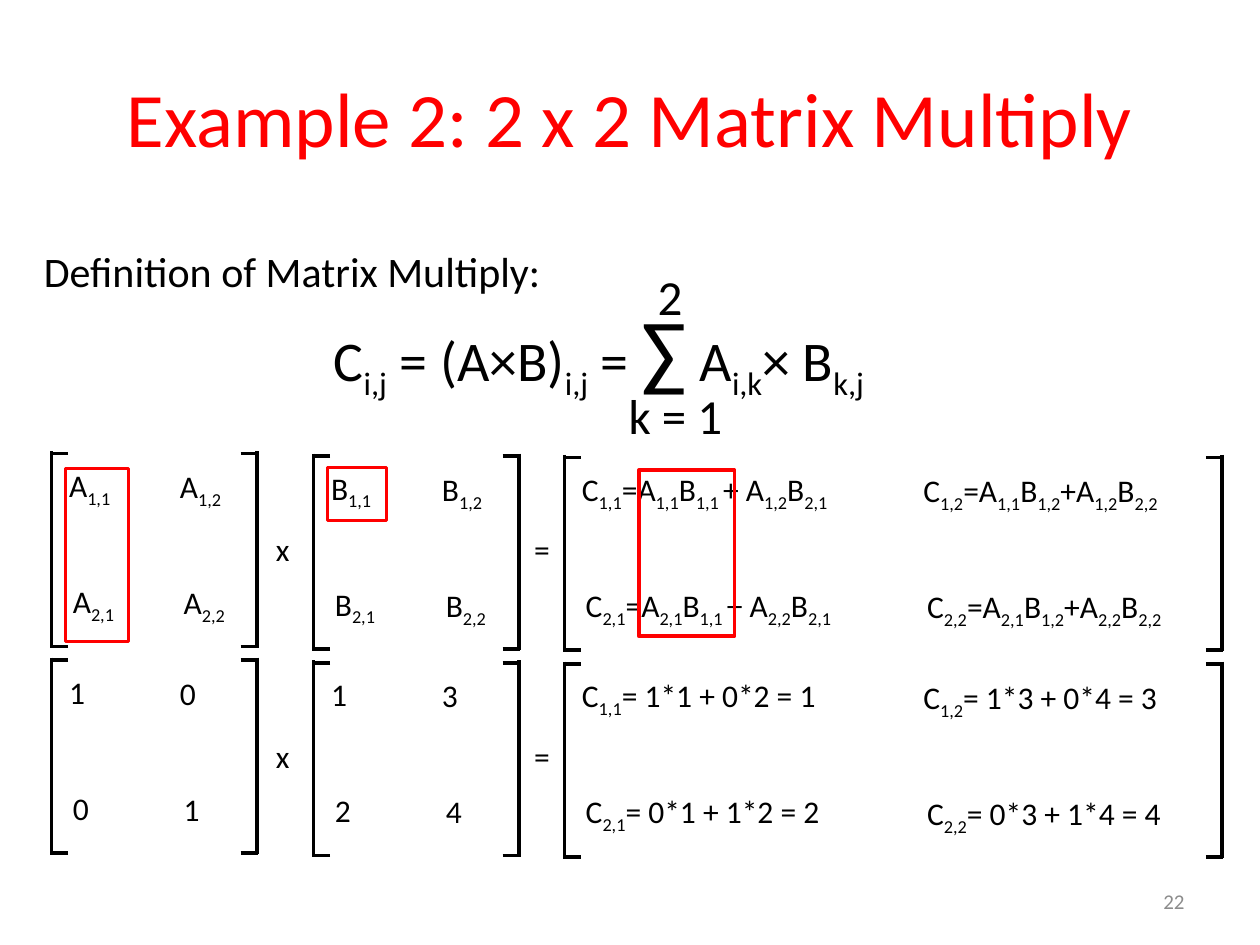
from lxml.etree import SubElement
from pptx import Presentation
from pptx.dml.color import RGBColor
from pptx.enum.shapes import MSO_CONNECTOR, MSO_SHAPE
from pptx.enum.text import MSO_ANCHOR, MSO_AUTO_SIZE, PP_ALIGN
from pptx.oxml.ns import qn
from pptx.util import Inches, Pt

COLORS = {"red": "FF0000", "black": "000000", "gray": "8C8C8C"}
SIGMA = "∑"

# Bracket left and right, top, and step between the two columns of entries
FRAMES = [
    (0.41, 2.04, 3.58, 0.88),
    (2.49, 4.12, 3.60, 0.88),
    (4.48, 9.70, 3.61, 2.71),
]
TALL = 1.56    # bracket height
DROP = 1.64    # from the symbol band to the number band

# Entries row by row as (text, width); [..] marks a subscript
SYMBOLS = [
    [(f"{name}[{i},{j}]", 0.56) for i in (1, 2) for j in (1, 2)]
    for name in "AB"
] + [[
    ("C[1,1]=A[1,1]B[1,1 ]+ A[1,2]B[2,1]", 2.31),
    ("C[1,2]=A[1,1]B[1,2]+A[1,2]B[2,2]", 2.22),
    ("C[2,1]=A[2,1]B[1,1 ]+ A[2,2]B[2,1]", 2.31),
    ("C[2,2]=A[2,1]B[1,2]+A[2,2]B[2,2]", 2.22),
]]
NUMBERS = [[(digit, 0.33) for digit in row] for row in ("1001", "1324")] + [[
    ("C[1,1]= 1*1 + 0*2 = 1", 2.08),
    ("C[1,2]= 1*3 + 0*4 = 3", 2.10),
    ("C[2,1]= 0*1 + 1*2 = 2", 2.12),
    ("C[2,2]= 0*3 + 1*4 = 4", 2.10),
]]


def paint(name):
    return RGBColor.from_string(COLORS[name])


def style(run, size, color="black"):
    run.font.name = "Calibri"
    run.font.size = Pt(size)
    run.font.color.rgb = paint(color)


def add_text(slide, text, x, y, w, h, size=18, wrap=False):
    """Add a text box in which [..] is set as a subscript."""
    frame = slide.shapes.add_textbox(
        Inches(x), Inches(y), Inches(w), Inches(h)).text_frame
    frame.word_wrap = wrap
    frame.auto_size = MSO_AUTO_SIZE.SHAPE_TO_FIT_TEXT
    for i, part in enumerate(text.replace("]", "[").split("[")):
        if not part:
            continue
        run = frame.paragraphs[0].add_run()
        run.text = part
        style(run, 48 if part == SIGMA else size)
        if i % 2:
            run.font._element.set("baseline", "-25000")
    return frame


def add_line(slide, x1, y1, x2, y2):
    line = slide.shapes.add_connector(
        MSO_CONNECTOR.STRAIGHT, Inches(x1), Inches(y1), Inches(x2), Inches(y2))
    line.line.color.rgb = paint("black")
    line.line.width = Pt(2)
    SubElement(line._element.spPr, qn("a:effectLst"))


def add_bracket(slide, x, top, side):
    """Side is 1 when the bracket opens to the right, -1 to the left."""
    add_line(slide, x, top, x, top + TALL)
    for y in (top + 0.02, top + TALL - 0.01):
        add_line(slide, x + 0.13 * side, y, x - 0.01 * side, y)


def add_matrix(slide, place, cells, shift):
    left, right, top, step = place
    top += shift
    add_bracket(slide, left, top, 1)
    add_bracket(slide, right, top, -1)
    for i, (text, width) in enumerate(cells):
        row, col = divmod(i, 2)
        add_text(slide, text, left + 0.04 + col * step + row * 0.03,
                 top + 0.07 + col * 0.01 + row * 0.92, width, 0.4)


def add_band(slide, cells, shift):
    """One equation: matrix x matrix = matrix."""
    for place, group in zip(FRAMES, cells):
        add_matrix(slide, place, group, shift)
    add_text(slide, "x", 2.09, 4.16 + shift, 0.31, 0.4)
    add_text(slide, "=", 4.14, 4.16 + shift, 0.33, 0.4)


def add_box(slide, x, y, w, h):
    box = slide.shapes.add_shape(
        MSO_SHAPE.RECTANGLE, Inches(x), Inches(y), Inches(w), Inches(h))
    box.shadow.inherit = False
    box.fill.background()
    box.line.color.rgb = paint("red")
    box.line.width = Pt(2)


def add_title(slide, text):
    title = slide.shapes.title
    title.left, title.top = Inches(0.5), Inches(0.3)
    title.width, title.height = Inches(9), Inches(1.25)
    frame = title.text_frame
    frame.text = text
    frame.vertical_anchor = MSO_ANCHOR.MIDDLE
    frame.paragraphs[0].alignment = PP_ALIGN.CENTER
    style(frame.paragraphs[0].runs[0], 44, "red")


def add_number(slide, text):
    frame = add_text(slide, text, 7.17, 6.95, 2.33, 0.4, 12, True)
    frame.auto_size = MSO_AUTO_SIZE.NONE
    frame.vertical_anchor = MSO_ANCHOR.MIDDLE
    frame.paragraphs[0].alignment = PP_ALIGN.RIGHT
    style(frame.paragraphs[0].runs[0], 12, "gray")


def main():
    deck = Presentation()
    deck.slide_width, deck.slide_height = Inches(10), Inches(7.5)
    slide = deck.slides.add_slide(deck.slide_layouts[5])
    add_title(slide, "Example 2: 2 x 2 Matrix Multiply")

    # Definition with the limits of the sum
    add_text(slide, f"C[i,j] = (A×B)[i,j] = []{SIGMA}[] A[i,k]× B[k,j]",
             2.55, 2.31, 4.58, 0.91, 32)
    add_text(slide, "2", 5.12, 2.07, 0.52, 0.57, 28, True)
    add_text(slide, "k = 1", 4.89, 3.01, 1.41, 0.57, 28, True)
    add_text(slide, "Definition of Matrix Multiply:", 0.25, 1.9, 4.18, 0.5, 24)

    # Symbols with the highlighted parts, then numbers
    add_band(slide, SYMBOLS, 0)
    add_box(slide, 0.52, 3.72, 0.5, 1.37)
    add_box(slide, 2.6, 3.71, 0.47, 0.42)
    add_box(slide, 5.07, 3.73, 0.76, 1.32)
    add_band(slide, NUMBERS, DROP)

    add_number(slide, "22")
    deck.save("out.pptx")


if __name__ == "__main__":
    main()
